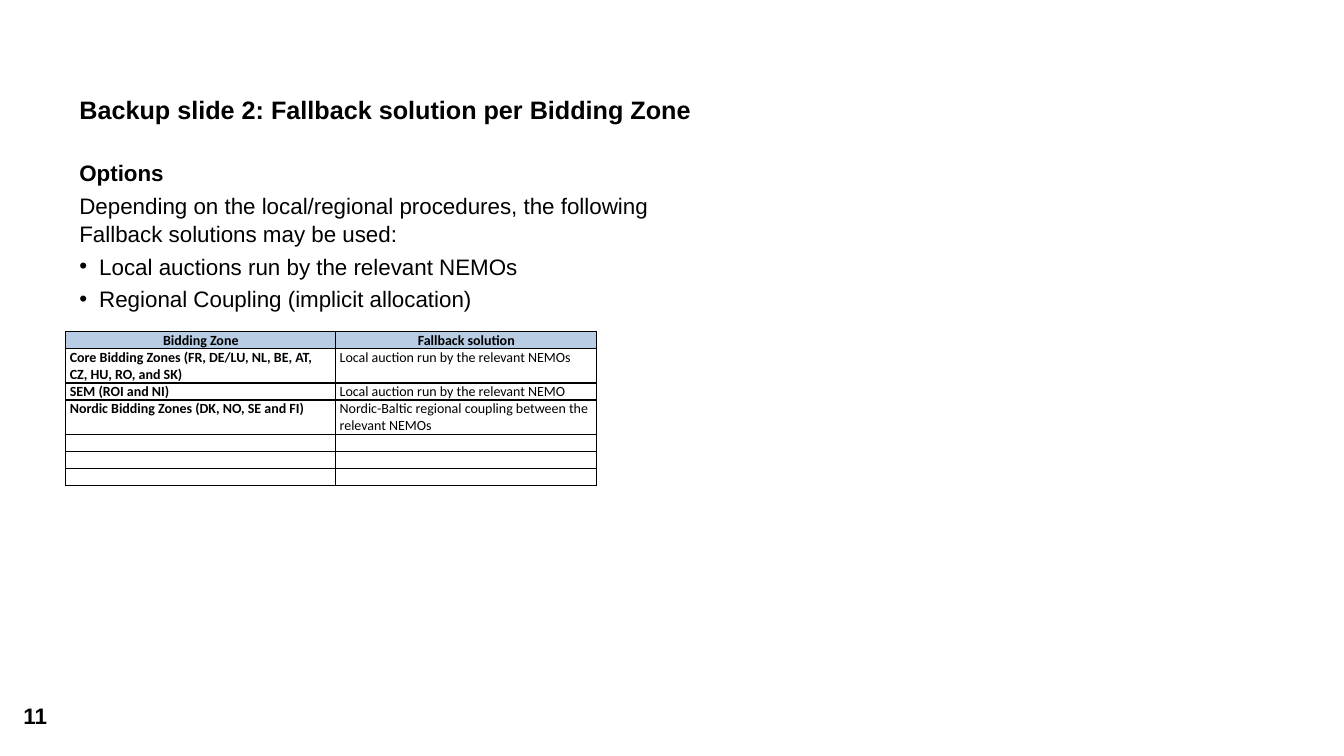
from dataclasses import dataclass

from lxml import etree
from pptx import Presentation
from pptx.dml import color
from pptx.enum import text
from pptx.oxml import ns
from pptx.util import Cm, Pt


@dataclass(frozen=True)
class Theme:
    ink: str = "000000"
    head: str = "B8CCE4"
    sans: str = "Arial"
    grid: str = "Calibri"
    title: int = 18
    body: int = 16
    cell: int = 10
    line: int = 1
    lead: float = 1.05


THEME = Theme()
LEFT = text.PP_ALIGN.LEFT
MID = text.PP_ALIGN.CENTER

LINES = [
    ("Options", True, False),
    ("Depending on the local/regional procedures, the following "
     "Fallback solutions may be used:", False, False),
    ("Local auctions run by the relevant NEMOs", False, True),
    ("Regional Coupling (implicit allocation)", False, True),
]
ROWS = [
    ("Bidding Zone", "Fallback solution"),
    ("Core Bidding Zones (FR, DE/LU, NL, BE, AT, CZ, HU, RO, and SK)",
     "Local auction run by the relevant NEMOs"),
    ("SEM (ROI and NI)", "Local auction run by the relevant NEMO"),
    ("Nordic Bidding Zones (DK, NO, SE and FI)",
     "Nordic-Baltic regional coupling between the relevant NEMOs"),
    ("", ""),
    ("", ""),
    ("", ""),
]
WIDTHS = (6.8, 6.58)
ROW = 0.43
TALL = (1, 3)


def add_run(para, words, size, bold, face=THEME.sans):
    run = para.add_run()
    run.text = words
    run.font.name = face
    run.font.size = Pt(size)
    run.font.bold = bold
    run.font.color.rgb = color.RGBColor.from_string(THEME.ink)


def place(shape, left, top, width, height):
    shape.left, shape.top = Cm(left), Cm(top)
    shape.width, shape.height = Cm(width), Cm(height)
    frame = shape.text_frame
    frame.margin_left = frame.margin_right = 0
    frame.margin_top = frame.margin_bottom = 0
    frame.word_wrap = True
    frame.auto_size = text.MSO_AUTO_SIZE.NONE
    frame.vertical_anchor = text.MSO_ANCHOR.TOP
    return frame


def set_bullet(para, shown):
    props = para._p.get_or_add_pPr()
    inset = Cm(0.5) if shown else 0
    props.set("marL", str(inset))
    props.set("indent", str(-inset))
    if shown:
        font = etree.SubElement(props, ns.qn("a:buFont"))
        font.set("typeface", THEME.sans)
        etree.SubElement(props, ns.qn("a:buChar")).set("char", "•")
    else:
        etree.SubElement(props, ns.qn("a:buNone"))


def add_title(slide):
    frame = place(slide.shapes.title, 2, 2.34, 29.8, 1.62)
    para = frame.paragraphs[0]
    para.alignment = LEFT
    para.line_spacing = THEME.lead
    add_run(para, "Backup slide 2: Fallback solution per Bidding Zone",
            THEME.title, True)


def add_body(slide):
    frame = place(slide.placeholders[1], 2, 3.98, 14.68, 13.6)
    for index, (words, bold, dot) in enumerate(LINES):
        para = frame.add_paragraph() if index else frame.paragraphs[0]
        set_bullet(para, dot)
        para.alignment = LEFT
        para.line_spacing = THEME.lead
        para.space_before = Pt(0.2 * THEME.body if index else 0)
        add_run(para, words, THEME.body, bold)


def add_number(slide):
    box = slide.shapes.add_textbox(0, 0, 0, 0)
    frame = place(box, 0.59, 17.7, 1.35, 0.69)
    add_run(frame.paragraphs[0], "11", THEME.body, True)


def add_border(cell):
    props = cell._tc.get_or_add_tcPr()
    for side in ("lnL", "lnR", "lnT", "lnB"):
        line = etree.SubElement(props, ns.qn(f"a:{side}"))
        line.set("w", str(Pt(THEME.line)))
        fill = etree.SubElement(line, ns.qn("a:solidFill"))
        etree.SubElement(fill, ns.qn("a:srgbClr")).set("val", THEME.ink)


def fill_cell(cell, words, head, bold):
    cell.margin_left = cell.margin_right = Cm(0.1)
    cell.margin_top = cell.margin_bottom = 0
    anchor = text.MSO_ANCHOR
    cell.vertical_anchor = anchor.MIDDLE if head else anchor.TOP
    add_border(cell)
    if head:
        cell.fill.solid()
        cell.fill.fore_color.rgb = color.RGBColor.from_string(THEME.head)
    else:
        cell.fill.background()
    para = cell.text_frame.paragraphs[0]
    para.alignment = MID if head else LEFT
    if words:
        add_run(para, words, THEME.cell, bold, THEME.grid)
    else:
        end = etree.SubElement(para._p, ns.qn("a:endParaRPr"))
        end.set("sz", str(THEME.cell * 100))
        etree.SubElement(end, ns.qn("a:latin")).set("typeface", THEME.grid)


def add_grid(slide):
    high = ROW * (len(ROWS) + len(TALL))
    table = slide.shapes.add_table(
        len(ROWS), len(WIDTHS), Cm(1.66), Cm(8.36),
        Cm(sum(WIDTHS)), Cm(high)).table
    table.first_row = False
    table.horz_banding = False
    for column, width in zip(table.columns, WIDTHS):
        column.width = Cm(width)
    for r, row in enumerate(ROWS):
        table.rows[r].height = Cm(ROW * (2 if r in TALL else 1))
        for c, words in enumerate(row):
            fill_cell(table.cell(r, c), words, r == 0, r == 0 or c == 0)


def main():
    deck = Presentation()
    deck.slide_width, deck.slide_height = Cm(33.87), Cm(19.05)
    slide = deck.slides.add_slide(deck.slide_layouts[1])
    add_title(slide)
    add_number(slide)
    add_body(slide)
    add_grid(slide)
    deck.save("out.pptx")


if __name__ == "__main__":
    main()
